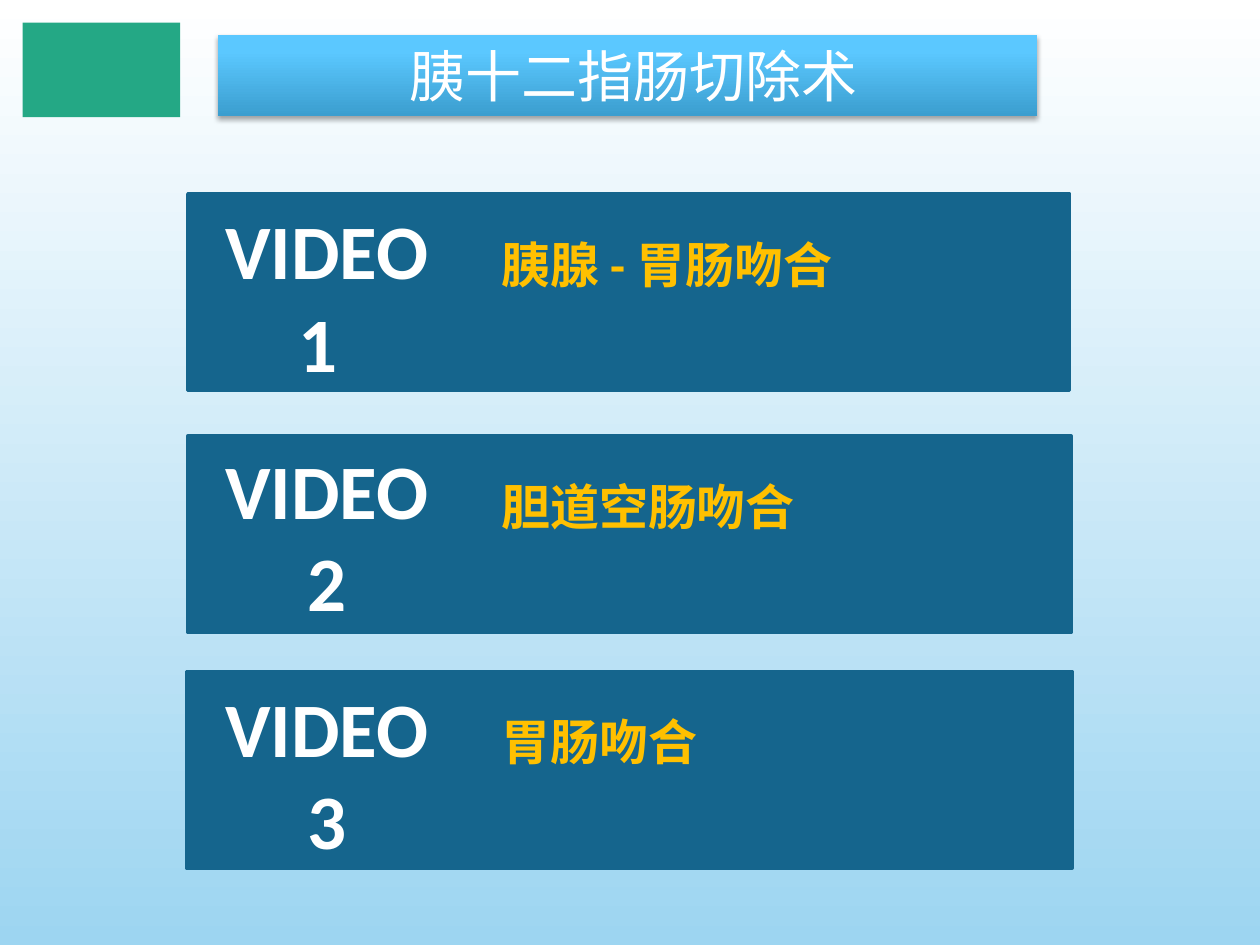
from dataclasses import dataclass

from lxml import etree
from pptx import Presentation
from pptx import util as u
from pptx.dml.color import RGBColor
from pptx.enum import shapes, text
from pptx.oxml import ns

WHITE = RGBColor(0xFF, 0xFF, 0xFF)
SKY = RGBColor(0x9D, 0xD5, 0xF1)
GREEN = RGBColor(0x24, 0xA8, 0x85)
NAVY = RGBColor(0x15, 0x65, 0x8D)
AMBER = RGBColor(0xFF, 0xC0, 0x00)
BANNER_LOW = RGBColor(0x3B, 0x9E, 0xCF)
BANNER_HIGH = RGBColor(0x5B, 0xC8, 0xFF)


@dataclass(frozen=True)
class Box:
    left: float
    top: float
    width: float
    height: float

    def emu(self) -> tuple:
        return tuple(u.Inches(v) for v in (self.left, self.top, self.width, self.height))


@dataclass(frozen=True)
class Video:
    number: str
    topic: str
    panel: Box
    label_top: float


VIDEOS = (
    Video("1 ", "胰腺 - 胃肠吻合", Box(1.49, 1.54, 7, 1.56), 1.56),
    Video("2", "胆道空肠吻合", Box(1.49, 3.46, 7.01, 1.56), 3.46),
    Video("3", "胃肠吻合", Box(1.48, 5.33, 7.03, 1.56), 5.35),
)


def set_gradient(fill, colors: tuple, ends: tuple, angle: float) -> None:
    fill.gradient()
    fill.gradient_angle = angle
    for stop, color, end in zip(fill.gradient_stops, colors, ends):
        stop.color.rgb = color
        stop.position = end


def add_panel(slide, box: Box, color: RGBColor, outlined: bool = True) -> None:
    panel = slide.shapes.add_shape(shapes.MSO_SHAPE.RECTANGLE, *box.emu())
    panel.shadow.inherit = False
    panel.fill.solid()
    panel.fill.fore_color.rgb = color
    if outlined:
        panel.line.color.rgb = color
        panel.line.width = u.Pt(2)
    else:
        panel.line.fill.background()


def write(frame, lines: tuple, size: float, color: RGBColor,
          bold: bool = False, align=None) -> None:
    frame.text = "\n".join(lines)
    for paragraph in frame.paragraphs:
        paragraph.alignment = align
        paragraph.font.name = "Calibri"
        paragraph.font.size = u.Pt(size)
        paragraph.font.bold = bold
        paragraph.font.color.rgb = color


def add_label(slide, box: Box, lines: tuple, size: float, color: RGBColor,
              align=None) -> None:
    frame = slide.shapes.add_textbox(*box.emu()).text_frame
    frame.word_wrap = True
    write(frame, lines, size, color, bold=True, align=align)


def add_banner(slide) -> None:
    banner = slide.shapes.title
    banner.left, banner.top, banner.width, banner.height = Box(1.73, 0.28, 6.5, 0.64).emu()
    set_gradient(banner.fill, (BANNER_LOW, BANNER_HIGH), (0, 0.8), 90)
    effects = etree.SubElement(banner.element.spPr, ns.qn("a:effectLst"))
    shadow = etree.SubElement(effects, ns.qn("a:outerShdw"), blurRad=str(u.Pt(3.1)),
                              dist=str(u.Pt(1.8)), dir="5400000", rotWithShape="0")
    black = etree.SubElement(shadow, ns.qn("a:srgbClr"), val="000000")
    etree.SubElement(black, ns.qn("a:alpha"), val="35000")

    frame = banner.text_frame
    frame.auto_size = text.MSO_AUTO_SIZE.NONE
    frame.vertical_anchor = text.MSO_ANCHOR.MIDDLE
    write(frame, (" 胰十二指肠切除术",), 32, WHITE, align=text.PP_ALIGN.CENTER)


def add_video(slide, video: Video) -> None:
    add_panel(slide, video.panel, NAVY)
    add_label(slide, Box(1.51, video.label_top, 2.17, 1.58), ("VIDEO", video.number),
              44, WHITE, align=text.PP_ALIGN.CENTER)
    add_label(slide, Box(3.88, video.panel.top + 0.27, 4.5, 0.57), (video.topic,), 28, AMBER)


def main() -> None:
    deck = Presentation()
    deck.slide_width, deck.slide_height = u.Inches(10), u.Inches(7.5)
    slide = deck.slides.add_slide(deck.slide_layouts.get_by_name("Title Only"))
    set_gradient(slide.background.fill, (WHITE, SKY), (0, 1), 270)

    add_panel(slide, Box(0.18, 0.18, 1.25, 0.75), GREEN, outlined=False)
    add_banner(slide)
    for video in VIDEOS:
        add_video(slide, video)
    deck.save("out.pptx")


if __name__ == "__main__":
    main()
